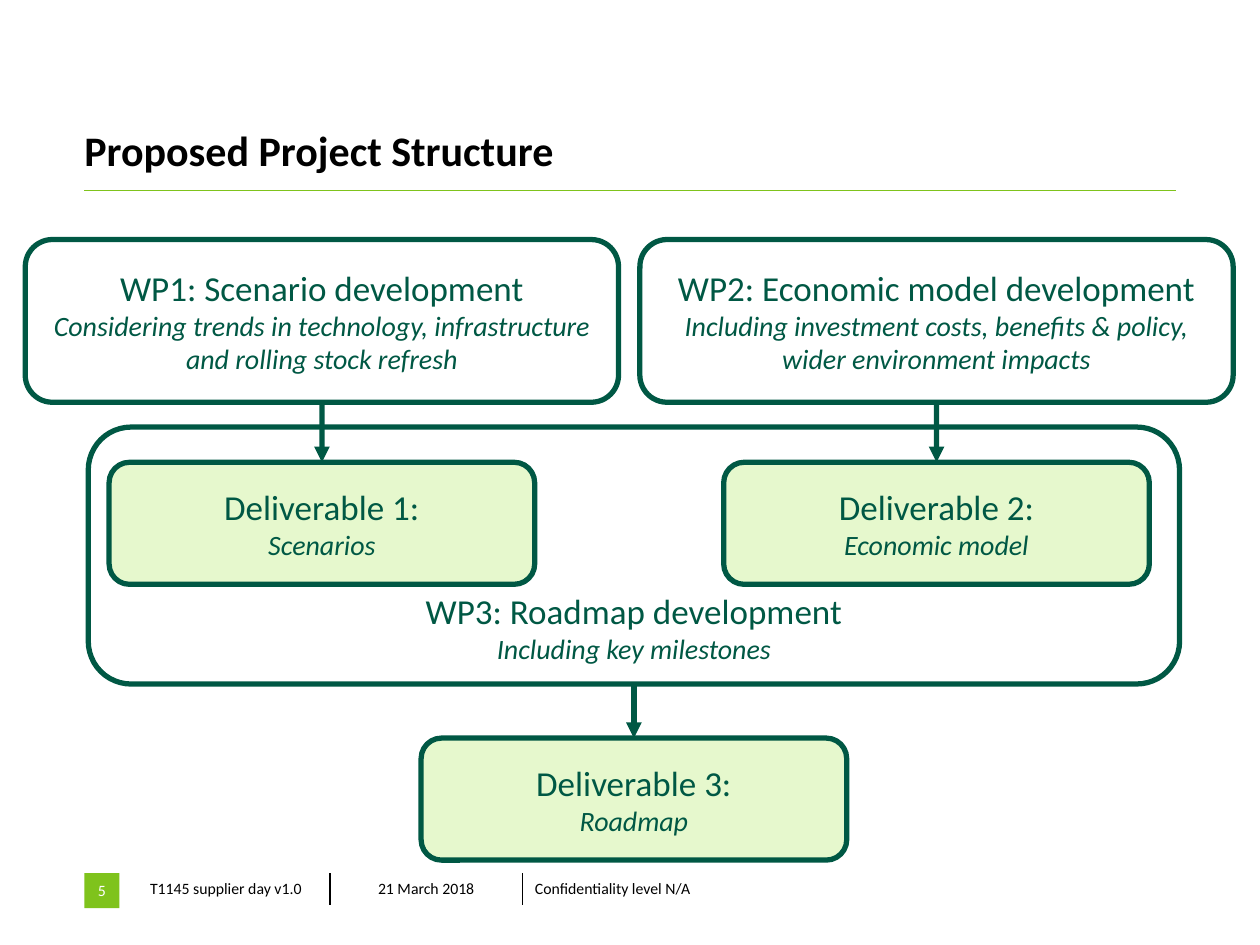
from dataclasses import dataclass

from lxml import etree
from pptx import Presentation
from pptx.dml.color import RGBColor
from pptx.enum.shapes import MSO_CONNECTOR, MSO_SHAPE
from pptx.enum.text import MSO_ANCHOR, PP_ALIGN
from pptx.oxml.ns import qn
from pptx.util import Cm, Pt

STRAIGHT = MSO_CONNECTOR.STRAIGHT
RECT, ROUNDED = MSO_SHAPE.RECTANGLE, MSO_SHAPE.ROUNDED_RECTANGLE
MIDDLE, BOTTOM = MSO_ANCHOR.MIDDLE, MSO_ANCHOR.BOTTOM
LEFT, CENTER = PP_ALIGN.LEFT, PP_ALIGN.CENTER
TOP_SIDE, BOTTOM_SIDE = 0, 2


@dataclass(frozen=True)
class Theme:
    font: str = "Calibri"
    ink: RGBColor = RGBColor(0x00, 0x00, 0x00)
    white: RGBColor = RGBColor(0xFF, 0xFF, 0xFF)
    accent: RGBColor = RGBColor(0x7F, 0xC3, 0x1C)
    dark: RGBColor = RGBColor(0x00, 0x58, 0x44)
    pale: RGBColor = RGBColor(0xE6, 0xF8, 0xCD)
    title: int = 24
    heading: int = 20
    detail: int = 16
    footer: int = 9
    rule: float = 0.6
    outline: int = 3


THEME = Theme()
MARGIN = 1.7
CONTENT_W = 22
FOOTER_TOP = 17.6


def style(p, size, color, align=LEFT, bold=False, italic=False):
    p.alignment = align
    for r in p.runs:
        font = r.font
        font.name, font.size, font.color.rgb = THEME.font, Pt(size), color
        font.bold, font.italic = bold, italic


def set_insets(tf, inset):
    tf.margin_left = tf.margin_right = tf.margin_top = tf.margin_bottom = Cm(inset)


def add_title(s, text):
    tf = s.shapes.add_textbox(Cm(MARGIN), Cm(1.27), Cm(CONTENT_W), Cm(2.26)).text_frame
    tf.word_wrap = True
    tf.vertical_anchor = BOTTOM
    set_insets(tf, 0)
    tf.text = text
    style(tf.paragraphs[0], THEME.title, THEME.ink, bold=True)


def add_line(s, start, end, color, width):
    line = s.shapes.add_connector(STRAIGHT, *map(Cm, start + end))
    line.line.color.rgb = color
    line.line.width = Pt(width)
    etree.SubElement(line._element.spPr, qn("a:effectLst"))
    return line


def add_box(s, center, top, width, height, heading, detail, fill=None, anchor=MIDDLE):
    """Rounded box with a heading and an italic detail, placed by its horizontal centre."""
    sp = s.shapes.add_shape(ROUNDED, Cm(center - width / 2), Cm(top), Cm(width), Cm(height))
    sp.shadow.inherit = False
    if fill is None:
        sp.fill.background()
    else:
        sp.fill.solid()
        sp.fill.fore_color.rgb = fill
    sp.line.color.rgb = THEME.dark
    sp.line.width = Pt(THEME.outline)
    tf = sp.text_frame
    tf.word_wrap = True
    tf.vertical_anchor = anchor
    tf.text = f"{heading}\n{detail}"
    style(tf.paragraphs[0], THEME.heading, THEME.dark, CENTER)
    style(tf.paragraphs[1], THEME.detail, THEME.dark, CENTER, italic=True)
    return sp


def add_work_package(s, center, heading, detail):
    return add_box(s, center, 4.83, 11.96, 3.28, heading, detail)


def add_deliverable(s, center, top, number, detail):
    return add_box(s, center, top, 8.58, 2.46, f"Deliverable {number}:", detail, THEME.pale)


def add_arrow(s, upper, lower):
    line = add_line(s, (0, 0), (1, 1), THEME.dark, THEME.outline)
    line.begin_connect(upper, BOTTOM_SIDE)
    line.end_connect(lower, TOP_SIDE)
    etree.SubElement(line.line._get_or_add_ln(), qn("a:tailEnd"), type="triangle")


def add_page_number(s, number):
    sp = s.shapes.add_shape(RECT, Cm(MARGIN), Cm(FOOTER_TOP), Cm(0.71), Cm(0.71))
    sp.shadow.inherit = False
    sp.fill.solid()
    sp.fill.fore_color.rgb = THEME.accent
    sp.line.fill.background()
    tf = sp.text_frame
    tf.vertical_anchor = MIDDLE
    set_insets(tf, 0.1)
    tf.text = number
    style(tf.paragraphs[0], THEME.footer, THEME.white, CENTER)


def set_side_borders(cell, left, right):
    """Draw the asked vertical borders and hide all others."""
    tc_pr = cell._tc.get_or_add_tcPr()
    sides = (("a:lnL", left), ("a:lnR", right), ("a:lnT", False), ("a:lnB", False))
    for i, (tag, shown) in enumerate(sides):
        ln = etree.Element(qn(tag), w=str(Pt(1)))
        if shown:
            fill = etree.SubElement(ln, qn("a:solidFill"))
            etree.SubElement(fill, qn("a:srgbClr"), val=str(THEME.ink))
        else:
            etree.SubElement(ln, qn("a:noFill"))
        tc_pr.insert(i, ln)


def add_footer(s, entries):
    col_w, row_h = 3.88, 0.64
    last = len(entries) - 1
    table = s.shapes.add_table(1, len(entries), Cm(2.77), Cm(FOOTER_TOP),
                               Cm(col_w * len(entries)), Cm(row_h)).table
    table.first_row = table.horz_banding = False
    table.rows[0].height = Cm(row_h)
    for i, (text, align) in enumerate(entries):
        table.columns[i].width = Cm(col_w)
        cell = table.cell(0, i)
        cell.fill.background()
        cell.vertical_anchor = MIDDLE
        cell.margin_top = cell.margin_bottom = 0
        cell.text_frame.text = text
        style(cell.text_frame.paragraphs[0], THEME.footer, THEME.ink, align)
        set_side_borders(cell, i > 0, i < last)


def main():
    prs = Presentation()
    prs.slide_width, prs.slide_height = Cm(25.4), Cm(19.05)
    s = prs.slides.add_slide(prs.slide_layouts[6])

    add_footer(s, [("T1145 supplier day v1.0", LEFT), ("21 March 2018", CENTER),
                   ("Confidentiality level N/A", LEFT)])
    add_line(s, (MARGIN, 3.84), (MARGIN + CONTENT_W, 3.84), THEME.accent, THEME.rule)
    add_title(s, "Proposed Project Structure")
    add_page_number(s, "5")

    left, middle, right = 6.49, 12.78, 18.88
    wp1 = add_work_package(s, left, "WP1: Scenario development",
                           "Considering trends in technology, infrastructure "
                           "and rolling stock refresh")
    wp2 = add_work_package(s, right, "WP2: Economic model development",
                           "Including investment costs, benefits & policy, "
                           "wider environment impacts")
    wp3 = add_box(s, middle, 8.61, CONTENT_W, 5.18, "WP3: Roadmap development",
                  "Including key milestones", anchor=BOTTOM)
    scenarios = add_deliverable(s, left, 9.32, 1, "Scenarios")
    model = add_deliverable(s, right, 9.32, 2, "Economic model")
    roadmap = add_deliverable(s, middle, 14.88, 3, "Roadmap")
    for upper, lower in ((wp1, scenarios), (wp2, model), (wp3, roadmap)):
        add_arrow(s, upper, lower)

    prs.save("out.pptx")


if __name__ == "__main__":
    main()
